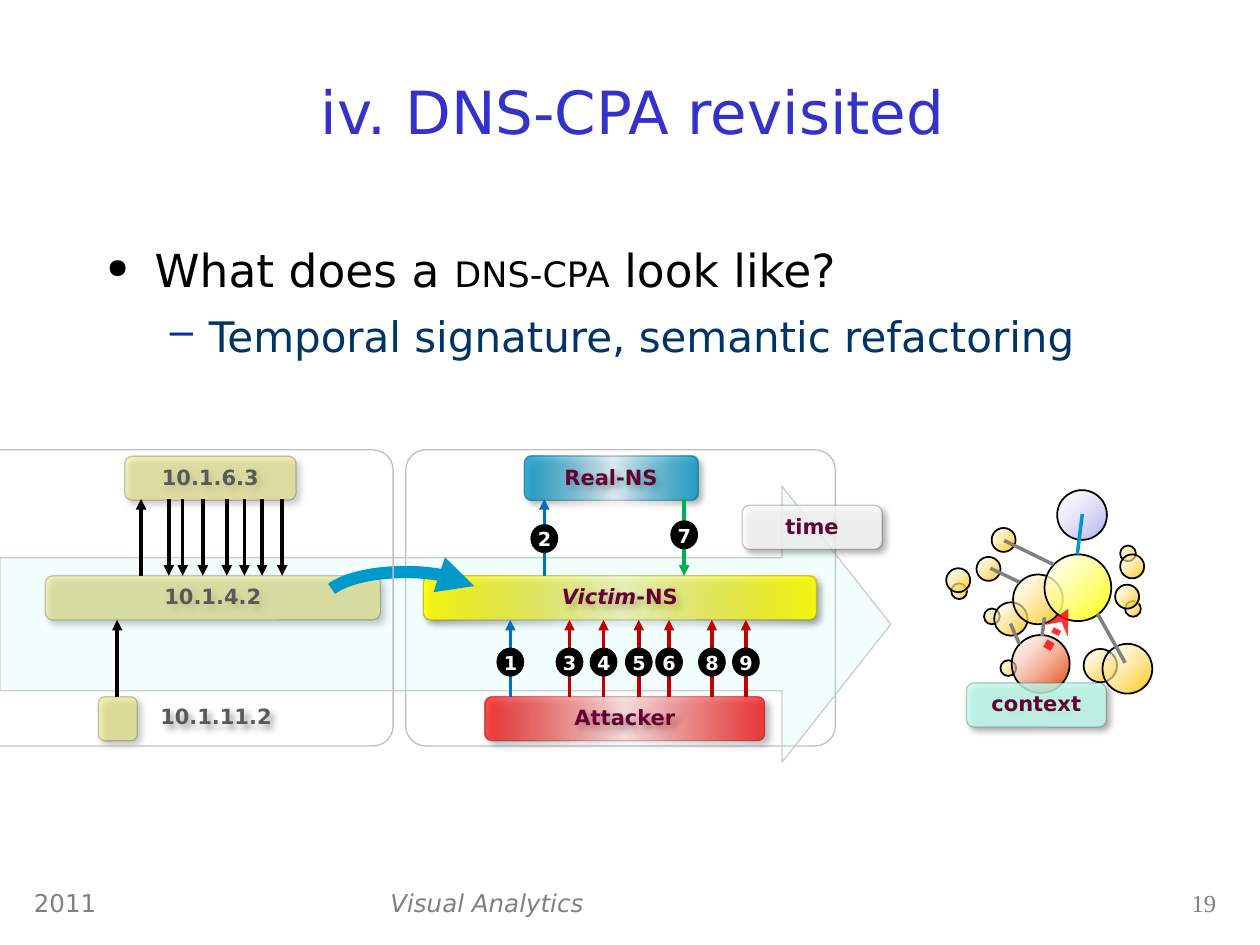
import pptx
import pptx.dml.color
import pptx.enum.dml
import pptx.enum.shapes
import pptx.enum.text
import pptx.oxml
import pptx.oxml.ns
import pptx.util

COLS, ROWS = 100, 75
CELL = pptx.util.Inches(0.1)
FONT = "DejaVu Sans"
HUES = {
    "title": "3333CC", "black": "000000", "white": "FFFFFF", "navy": "003366",
    "dash": "003399", "grey": "808080", "frame": "BFBFBF", "edge": "CCCCCC",
    "mint": "C2FFF0", "khaki": "EBEB79", "ash": "595959", "wine": "660033",
    "yellow": "FFFF00", "teal": "0099CC", "red": "FF0000", "blue": "0070C0",
    "green": "00B050", "crimson": "C00000", "gold": "FFC000",
    "lilac": "ADADEB", "rust": "E53900",
}
KIND = pptx.enum.shapes.MSO_SHAPE
ALIGN = pptx.enum.text.PP_ALIGN
DOTS = {
    1.25: [(3.1, 10.3), (14.3, 9.7), (4.4, 14.4), (13.9, 5.3), (0.5, 8.3)],
    1.9: [(2.5, 6.2), (3.7, 3.9), (13.9, 6), (0.1, 7.1), (13.5, 8.4)],
    2.65: [(11, 13.5), (3.9, 9.8)],
    3.95: [(5.4, 7.6), (12.5, 13.1)],
}
LINKS = [(13.6, 7.1, 4.7, 10.7), (13.6, 4.8, 4.7, 0), (10.9, 8.2, 7, 4.9)]
SPOKES = [
    (14.3, 14.6, 12.1, 10.7), (8.6, 6.8, 4.7, 4.9), (5.9, 8.2, 3.6, 7.1),
    (7.7, 12.5, 7.9, 11), (5.9, 13.1, 5.2, 11.5),
]


def xml(text):
    """Parse a DrawingML fragment."""
    space = pptx.oxml.ns.nsdecls("a")
    return pptx.oxml.parse_xml(text.replace(">", f" {space}>", 1)
                               if "/>" not in text.split(">")[0] + ">"
                               else text.replace("/>", f" {space}/>", 1))


def tint(hue):
    """Return the named colour."""
    return pptx.dml.color.RGBColor.from_string(HUES[hue])


def place(box, x, y, *size):
    """Turn grid offsets inside a box into slide lengths."""
    return [round(n * CELL) for n in (box[0] + x, box[1] + y, *size)]


def paint(shape, stops, turn=0):
    """Fill with (position, hue, opacity) stops; one stop is a plain fill."""
    inks = [f'<a:srgbClr val="{HUES[hue]}"><a:alpha val="{alpha * 1000}"/></a:srgbClr>'
            for _, hue, alpha in stops]
    if len(stops) == 1:
        text = f"<a:solidFill>{inks[0]}</a:solidFill>"
    else:
        marks = "".join(f'<a:gs pos="{stop[0] * 1000}">{ink}</a:gs>'
                        for stop, ink in zip(stops, inks))
        text = (f"<a:gradFill><a:gsLst>{marks}</a:gsLst>"
                f'<a:lin ang="{turn * 60000}" scaled="0"/></a:gradFill>')
    shape.fill.background()
    props = shape.element.spPr
    props.replace(props.find(pptx.oxml.ns.qn("a:noFill")), xml(text))


def stroke(shape, hue, width, alpha=100, head=None):
    """Set line colour, width, opacity and end arrowhead."""
    shape.line.color.rgb = tint(hue)
    shape.line.width = pptx.util.Pt(width)
    line = shape.line._get_or_add_ln()
    if alpha < 100:
        ink = line.find(".//" + pptx.oxml.ns.qn("a:srgbClr"))
        ink.append(xml(f'<a:alpha val="{alpha * 1000}"/>'))
    if head:
        line.append(xml(f'<a:tailEnd type="{head}"/>'))


def style(para, size, hue, align=None, font=FONT, bold=False, slant=False):
    """Format every run of a paragraph."""
    para.alignment = align
    for run in para.runs:
        face = run.font
        face.name, face.size = font, pptx.util.Pt(size)
        face.bold, face.italic = bold, slant
        face.color.rgb = tint(hue)


def form(slide, kind, spot, stops=(), turn=0, edge=None):
    """Add a preset shape without theme shadow."""
    shape = slide.shapes.add_shape(kind, *spot)
    shape.shadow.inherit = False
    if stops:
        paint(shape, stops, turn)
    else:
        shape.fill.background()
    if edge:
        stroke(shape, *edge)
    else:
        shape.line.fill.background()
    return shape


def label(slide, spot, text, *look, **more):
    """Add a wrapped one-line text box."""
    frame = slide.shapes.add_textbox(*spot).text_frame
    frame.word_wrap = True
    frame.text = text
    style(frame.paragraphs[0], *look, **more)
    return frame


def card(slide, spot, text, hue, stops, turn=0, edge=("black", 0.75, 20)):
    """Add a rounded card with a soft shadow and bold text."""
    shape = form(slide, KIND.ROUNDED_RECTANGLE, spot, stops, turn, edge)
    shape.element.spPr.find(pptx.oxml.ns.qn("a:effectLst")).append(xml(
        '<a:outerShdw blurRad="50800" dist="38100" dir="2700000">'
        '<a:srgbClr val="000000"><a:alpha val="40000"/></a:srgbClr></a:outerShdw>'))
    frame = shape.text_frame
    frame.vertical_anchor = pptx.enum.text.MSO_ANCHOR.BOTTOM
    frame.margin_bottom = pptx.util.Inches(0.07)
    if text:
        frame.text = text
        style(frame.paragraphs[0], 12, hue, ALIGN.CENTER, bold=True)
    return shape


def link(slide, box, ends, hue, width=2, alpha=100, head=None):
    """Draw a straight line between two grid points of a box."""
    ends = place(box, *ends[:2]) + place(box, *ends[2:])
    line = slide.shapes.add_connector(pptx.enum.shapes.MSO_CONNECTOR.STRAIGHT, *ends)
    stroke(line, hue, width, alpha, head)
    line.element.spPr.append(xml("<a:effectLst/>"))
    return line


def frame(slide, box):
    """Outline a region."""
    shape = form(slide, KIND.ROUNDED_RECTANGLE, place(box, 0, 0, *box[2:]),
                 edge=("frame", 0.75))
    shape.adjustments[0] = 0.068


def heading(slide, box):
    """Move and format the title."""
    title = slide.shapes.title
    title.left, title.top, title.width, title.height = place(box, 0, 0, *box[2:])
    title.text_frame.text = "iv. DNS-CPA revisited"
    title.text_frame.vertical_anchor = pptx.enum.text.MSO_ANCHOR.BOTTOM
    style(title.text_frame.paragraphs[0], 34, "title", ALIGN.CENTER)


def points(slide, box):
    """Write the two bullet levels."""
    text = slide.shapes.add_textbox(*place(box, 0, 0, *box[2:])).text_frame
    text.word_wrap = True
    text.margin_top = pptx.util.Inches(0.08)
    first, second = text.paragraphs[0], text.add_paragraph()
    for part in ("What does a ", "DNS-CPA", " look like?"):
        first.add_run().text = part
    second.text = "Temporal signature, semantic refactoring"
    second.level = 1
    marks = (
        (first, 0.38, 0.38, ['<a:buSzPct val="60000"/>', '<a:buChar char="●"/>']),
        (second, 0.81, 0.31, [f'<a:buClr><a:srgbClr val="{HUES["dash"]}"/></a:buClr>',
                              '<a:buChar char="–"/>']),
    )
    for para, left, hang, tags in marks:
        props = para._p.get_or_add_pPr()
        props.set("marL", str(pptx.util.Inches(left)))
        props.set("indent", str(-pptx.util.Inches(hang)))
        for tag in tags:
            props.append(xml(tag))
        para.line_spacing = 1.1
    second.space_before = pptx.util.Pt(5)
    style(first, 26, "black")
    first.runs[1].font.size = pptx.util.Pt(20)
    style(second, 24, "navy")


def footer(slide, box):
    """Write year, deck name and page number."""
    high = box[3]
    label(slide, place(box, 0, 0, 25.8, high), "2011", 14, "grey")
    label(slide, place(box, 28.3, 0, 44.2, high), "Visual Analytics", 14, "grey", slant=True)
    label(slide, place(box, 84.1, 0, 11.7, high), "19", 14, "grey", ALIGN.RIGHT,
          font="Times New Roman")


def hosts(slide, box):
    """Draw the observed hosts and their traffic."""
    plain = [(0, "khaki", 50)]
    card(slide, place(box, 13.6, 0.5, 13.6, 3.5), "10.1.6.3", "ash", plain)
    card(slide, place(box, 7.3, 10, 26.6, 3.5), "10.1.4.2", "ash", plain)
    card(slide, place(box, 11.5, 19.6, 3.1, 3.5), "", "ash", [(0, "khaki", 57)])
    link(slide, box, (13, 19.6, 13, 13.5), "black", head="triangle")
    link(slide, box, (14.9, 10, 14.9, 3.9), "black", head="triangle")
    for x in (17.1, 18.2, 19.8, 21.7, 23.1, 24.5, 26.1):
        link(slide, box, (x, 3.9, x, 10), "black", head="triangle")
    card(slide, place(box, 13.6, 18.4, 14.5, 4.7), "10.1.11.2", "ash", (), edge=None)


def servers(slide, box):
    """Draw the attack between name servers with numbered steps."""
    victim = card(slide, place(box, 1.4, 10, 31.2, 3.5), "Victim", "wine",
                  [(0, "yellow", 90), (50, "yellow", 20), (100, "yellow", 90)])
    para = victim.text_frame.paragraphs[0]
    para.add_run().text = "-NS"
    style(para, 12, "wine", ALIGN.CENTER, bold=True)
    para.runs[0].font.italic = True
    card(slide, place(box, 9.4, 0.5, 13.8, 3.5), "Real-NS", "wine",
         [(0, "teal", 80), (49, "teal", 10), (100, "teal", 80)], 180)
    card(slide, place(box, 6.3, 19.6, 22.2, 3.5), "Attacker", "wine",
         [(0, "red", 70), (50, "red", 10), (100, "red", 70)])
    low, up, down = (19.6, 13.5, 15.7), (10, 3.9, 5.9), (3.9, 10, 5.6)
    steps = [(8.3, "blue", low), (11, "blue", up), (13, "crimson", low),
             (15.7, "crimson", low), (18.5, "crimson", low), (20.9, "crimson", low),
             (22.1, "green", down), (24.3, "crimson", low), (27, "crimson", low)]
    for count, (x, hue, (start, end, top)) in enumerate(steps, 1):
        link(slide, box, (x, start, x, end), hue, head="triangle")
        form(slide, KIND.OVAL, place(box, x - 1.1, top, 2.2, 2.3), [(0, "black", 100)])
        text = label(slide, place(box, x - 1.5, top - 0.4, 3, 3), str(count), 11,
                     "white", ALIGN.CENTER, bold=True)
        text.vertical_anchor = pptx.enum.text.MSO_ANCHOR.BOTTOM


def bow(slide, box):
    """Draw the curved arrow from host to victim."""
    arc = form(slide, KIND.ARC, place(box, 0, 0, *box[2:]), edge=("teal", 7, 100, "triangle"))
    arc.adjustments[0], arc.adjustments[1] = 113.88, 208.39


def net(slide, box):
    """Draw the context graph."""
    def disc(x, y, size, hue="gold", alpha=95, fade=47):
        """Add one shaded node."""
        form(slide, KIND.OVAL, place(box, x, y, size, size),
             [(0, hue, alpha), (100, "white", fade)], 225, ("black", 1))

    for size, spots in DOTS.items():
        for spot in spots:
            disc(*spot, size)
    disc(8.9, 0.9, 3.95, "lilac", 100)
    disc(5.3, 12.4, 4.6, "rust", 100)
    disc(7.9, 6, 5.3, "yellow", 100, 70)
    link(slide, box, (10.5, 6, 10.9, 2.8), "teal")
    hit = link(slide, box, (8.1, 13.5, 9.8, 10.3), "red", 4.75, 80, "stealth")
    hit.line.dash_style = pptx.enum.dml.MSO_LINE.ROUND_DOT
    for ends in SPOKES:
        link(slide, box, ends, "grey")
    card(slide, place(box, 1.7, 16.2, 11.1, 3.5), "context", "wine", [(0, "mint", 80)])


def main():
    """Build the slide."""
    deck = pptx.Presentation()
    deck.slide_width, deck.slide_height = COLS * CELL, ROWS * CELL
    slide = deck.slides.add_slide(deck.slide_layouts[5])
    left, right = (-3.7, 35.7, 34.9, 23.5), (32.2, 35.7, 34.1, 23.5)
    frame(slide, right)
    heading(slide, (8.7, 3.8, 83, 8.3))
    points(slide, (7.5, 18, 85, 45))
    footer(slide, (1.7, 70, 95.8, 3.3))
    sweep = form(slide, KIND.RIGHT_ARROW, place((0, 38.6), 0, 0, 70.7, 21.9),
                 [(0, "mint", 20)], edge=("edge", 0.75))
    sweep.adjustments[0], sweep.adjustments[1] = 0.482, 0.394
    hosts(slide, left)
    servers(slide, right)
    bow(slide, (25.7, 45.4, 12.9, 4.7))
    net(slide, (75, 38, 16.5, 19.7))
    card(slide, place(right, 26.7, 4.4, 11.1, 3.5), "time", "wine", [(0, "white", 80)])
    frame(slide, left)
    deck.save("out.pptx")


if __name__ == "__main__":
    main()
